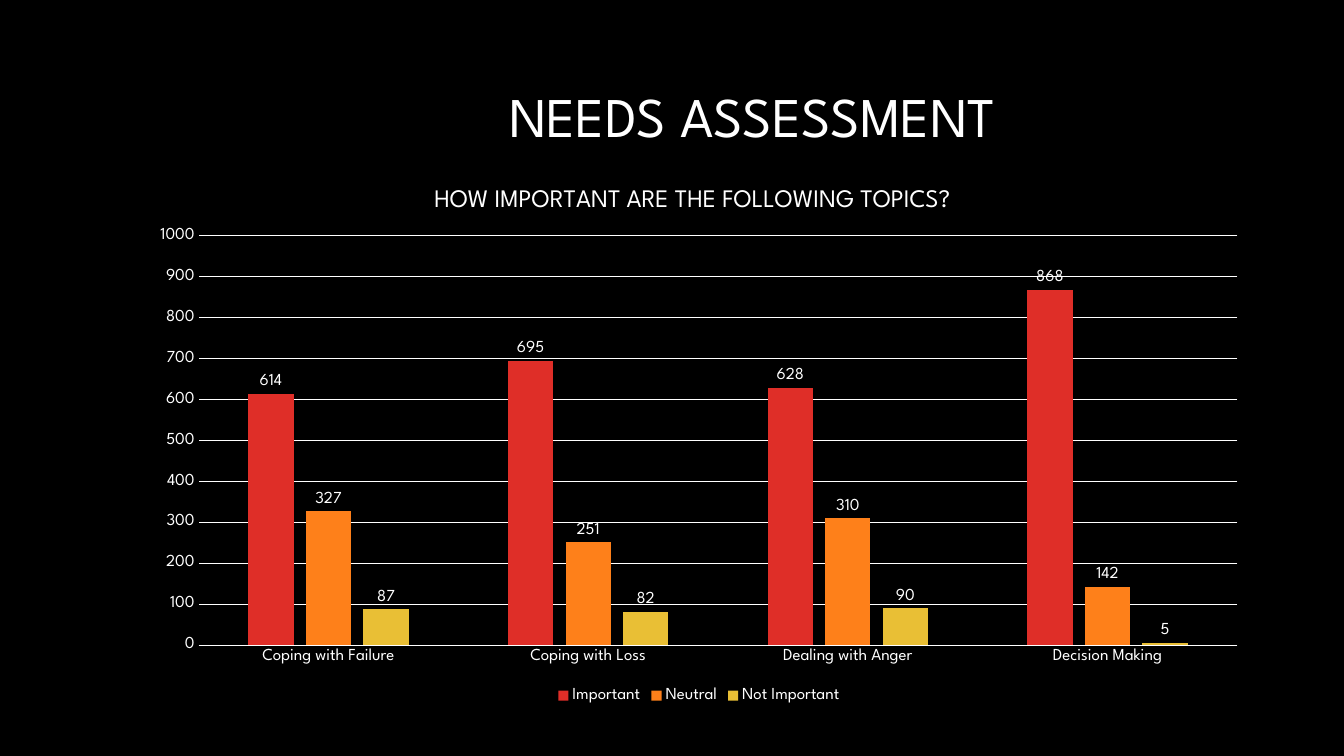
from lxml import etree
from pptx import Presentation
from pptx.chart import data
from pptx.dml import color
from pptx.enum import chart as kinds, text
from pptx.oxml import ns
from pptx.util import Cm, Pt

FACE = "League Spartan"
HUES = {"back": "000000", "ink": "FFFFFF", "Important": "DF2E28",
        "Neutral": "FE801A", "Not Important": "E9BF35"}
VOTES = {"Important": (614, 695, 628, 868),
         "Neutral": (327, 251, 310, 142),
         "Not Important": (87, 82, 90, 5)}
TOPICS = ("Coping with Failure", "Coping with Loss",
          "Dealing with Anger", "Decision Making")


def write(frame, words, size, bold=False, space=None):
    frame.text = words
    par = frame.paragraphs[0]
    par.alignment = text.PP_ALIGN.CENTER
    if space:
        par.line_spacing = space
    font = par.runs[0].font
    font.name, font.size, font.bold = FACE, Pt(size), bold
    font.color.rgb = ink


def pin(node, index, **spots):
    for old in node.findall(ns.qn("c:layout")):
        node.remove(old)
    layout = etree.Element(ns.qn("c:layout"))
    manual = etree.SubElement(layout, ns.qn("c:manualLayout"))
    for tag, value in spots.items():
        etree.SubElement(manual, ns.qn("c:" + tag)).set("val", str(value))
    node.insert(index, layout)


ink = color.RGBColor.from_string(HUES["ink"])
deck = Presentation()
deck.slide_width, deck.slide_height = Cm(33.87), Cm(19.05)
slide = deck.slides.add_slide(deck.slide_layouts[5])
slide.background.fill.solid()
slide.background.fill.fore_color.rgb = color.RGBColor.from_string(HUES["back"])

title = slide.shapes.title
title.left, title.top = Cm(6.99), Cm(1.22)
title.width, title.height = Cm(23.93), Cm(3.58)
write(title.text_frame, "NEEDS ASSESSMENT", 40, space=0.9)
title.text_frame.vertical_anchor = text.MSO_ANCHOR.MIDDLE

table = data.CategoryChartData()
table.categories = TOPICS
for name, votes in VOTES.items():
    table.add_series(name, votes)
chart = slide.shapes.add_chart(
    kinds.XL_CHART_TYPE.COLUMN_CLUSTERED,
    Cm(3.48), Cm(4.04), Cm(28.27), Cm(13.79), table).chart
chart.font.name, chart.font.size = FACE, Pt(10)
chart.font.color.rgb = ink
chart.has_title = True
write(chart.chart_title.text_frame,
      "HOW IMPORTANT ARE THE FOLLOWING TOPICS?", 18)
chart.chart_title.include_in_layout = False
chart.has_legend = True
chart.legend.position = kinds.XL_LEGEND_POSITION.BOTTOM
chart.legend.include_in_layout = False

plot = chart.plots[0]
plot.gap_width, plot.overlap, plot.vary_by_categories = 219, -27, False
fonts = [chart.legend.font]
for bars in plot.series:
    bars.format.fill.solid()
    bars.format.fill.fore_color.rgb = color.RGBColor.from_string(HUES[bars.name])
    bars.invert_if_negative = False
    labels = bars.data_labels
    labels.show_value = True
    labels.position = kinds.XL_LABEL_POSITION.OUTSIDE_END
    fonts.append(labels.font)

topic, scale = chart.category_axis, chart.value_axis
for axis in (topic, scale):
    axis.major_tick_mark = axis.minor_tick_mark = kinds.XL_TICK_MARK.NONE
    fonts.append(axis.tick_labels.font)
scale.minimum_scale, scale.maximum_scale, scale.major_unit = 0, 1000, 100
scale.has_major_gridlines = True
scale.format.line.fill.background()
for line in (topic.format.line, scale.major_gridlines.format.line):
    line.color.rgb, line.width = ink, Pt(0.75)
for font in fonts:
    font.name, font.size = FACE, Pt(12)
    font.color.rgb = ink

root = chart.element
pin(root.find(".//" + ns.qn("c:plotArea")), 0, layoutTarget="inner",
    xMode="edge", yMode="edge", x=0.054, y=0.138, w=0.926, h=0.748)
pin(root.find(".//" + ns.qn("c:title")), 1,
    xMode="edge", yMode="edge", x=0.26, y=0.04)

deck.save("out.pptx")
